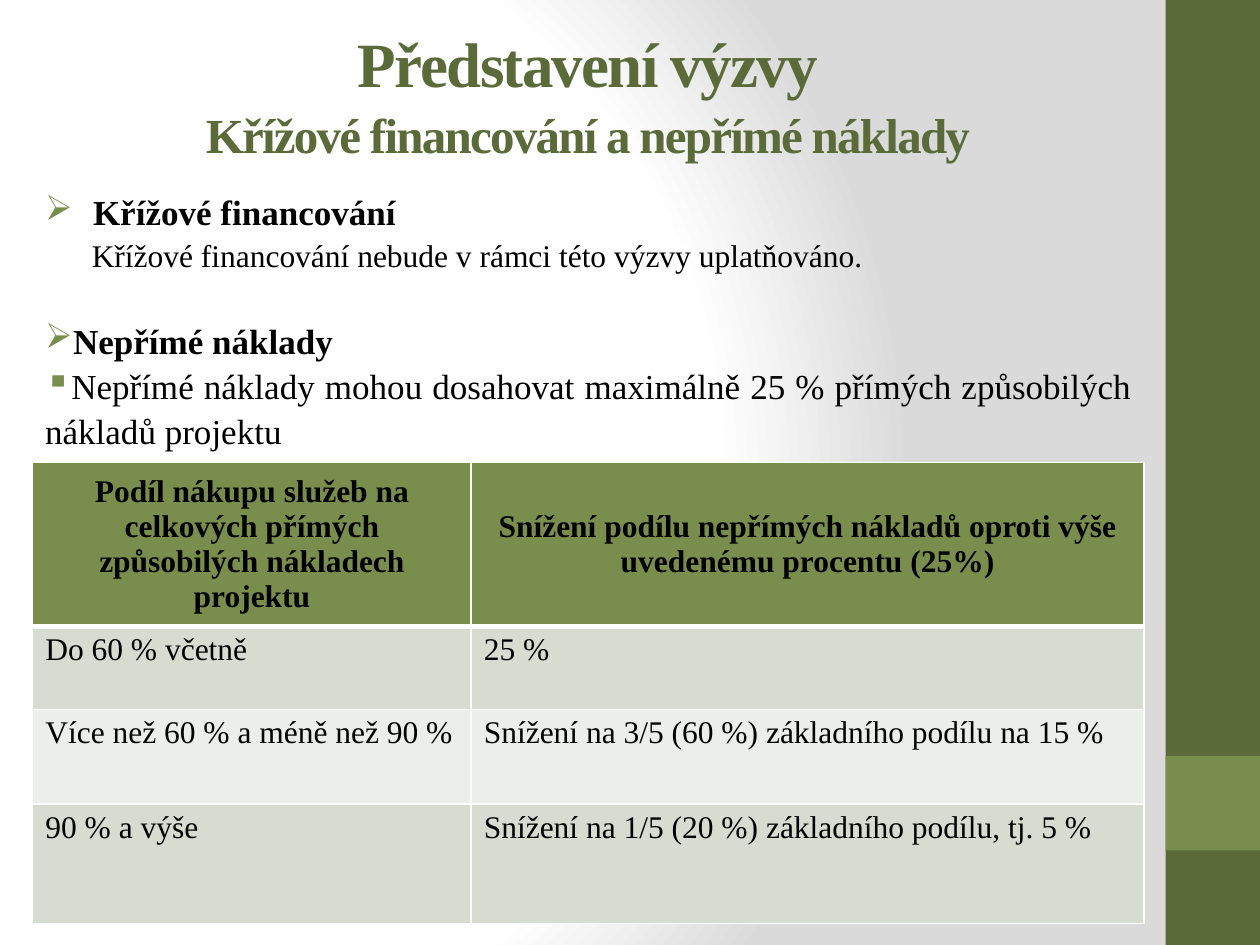
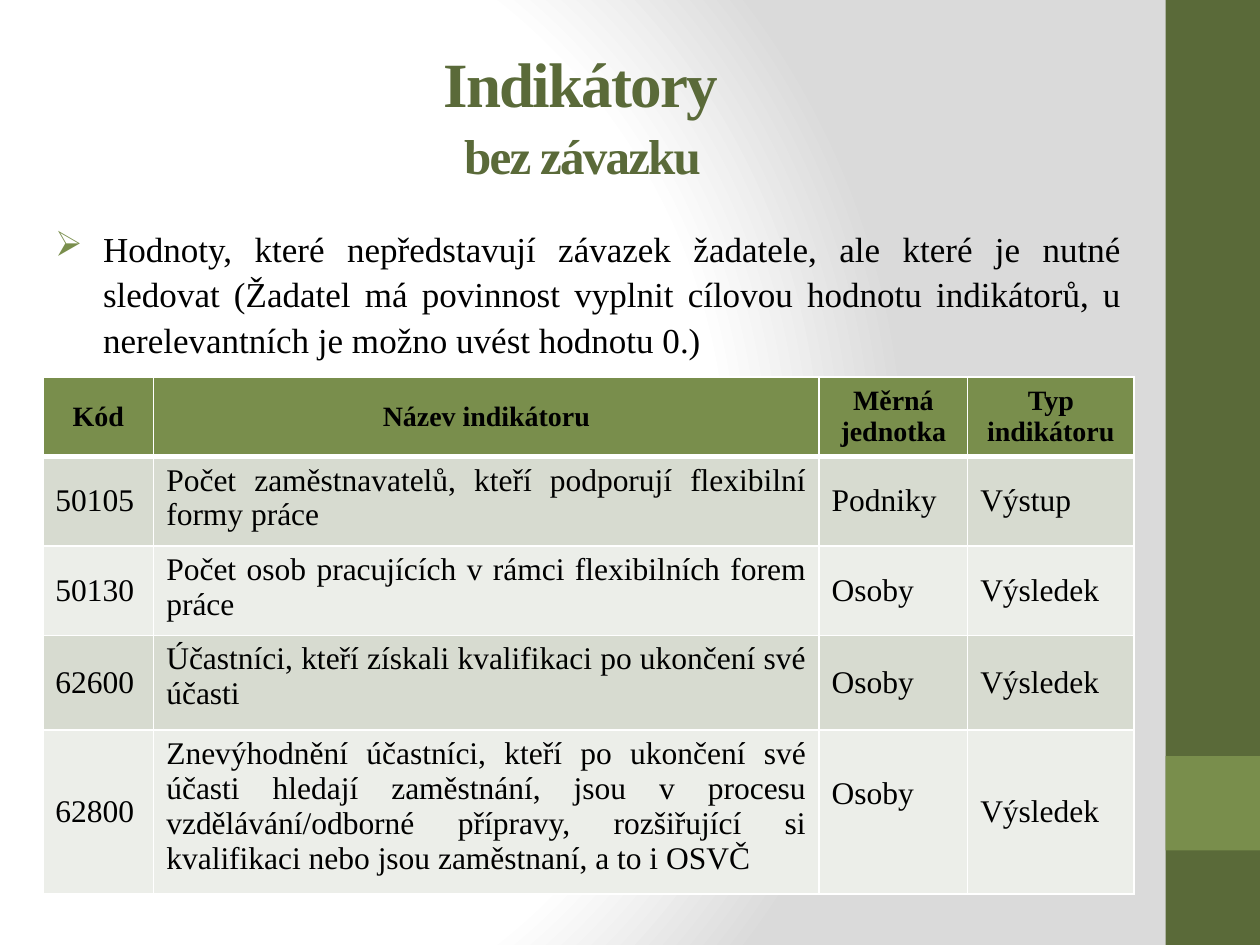
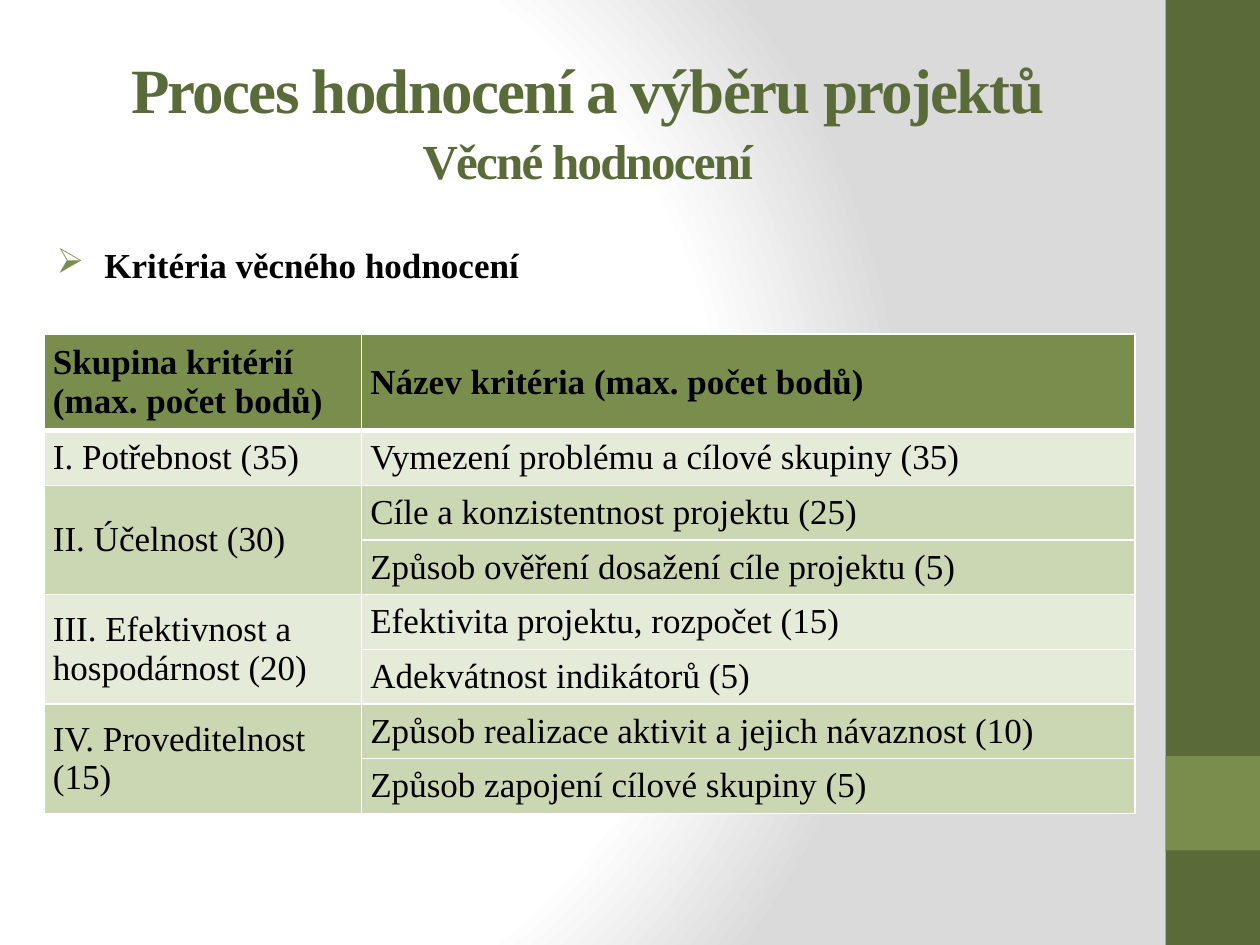
from dataclasses import dataclass

from lxml.etree import SubElement
from pptx import Presentation
from pptx.dml.color import RGBColor
from pptx.enum.shapes import MSO_SHAPE as Preset
from pptx.enum.text import MSO_ANCHOR as Anchor, MSO_AUTO_SIZE as AutoSize, PP_ALIGN as Align
from pptx.oxml import parse_xml
from pptx.oxml.ns import nsdecls, qn
from pptx.presentation import Presentation as Deck
from pptx.slide import Slide
from pptx.table import _Cell as Cell
from pptx.text.text import _Paragraph as Paragraph
from pptx.util import Inches, Pt

COLORS = {
    "dark": "5A6A39",
    "green": "798E4C",
    "text": "000000",
    "white": "FFFFFF",
    "edge": "DADADA",
    "gray_dark": "D7DBD0",
    "gray_light": "ECEEE9",
    "green_dark": "CBD6B3",
    "green_light": "E5EBD9",
}
FONT = "Times New Roman"
LINE_SPACING = 1.08


@dataclass
class Band:
    top: float
    height: float
    color: str


@dataclass
class Title:
    main: str
    sub: str
    top: float
    height: float


@dataclass
class Item:
    text: str
    size: int = 20
    bold: bool = False
    bullet: str = ""
    left: float = 0.38
    hanging: float = 0.38
    before: int = 0
    align: Align = Align.JUSTIFY


@dataclass
class Body:
    left: float
    top: float
    width: float
    height: float
    items: list[Item]


@dataclass
class Grid:
    left: float
    top: float
    columns: list[float]
    heights: list[float]
    rows: list[list[str]]
    fills: list[str]
    anchors: list[Anchor]
    head_size: int = 18
    size: int = 18
    head_align: Align = Align.CENTER
    align: Align = Align.LEFT
    inset: float = 0.1


BANDS = [Band(0, 7.5, "dark"), Band(6, 0.75, "green")]


def rgb(name: str) -> RGBColor:
    return RGBColor.from_string(COLORS[name])


def set_font(para: Paragraph, size: int, color: str, bold: bool) -> None:
    para.font.name = FONT
    para.font.size = Pt(size)
    para.font.bold = bold
    para.font.color.rgb = rgb(color)


def set_background(deck: Deck) -> None:
    stops = "".join(
        f'<a:gs pos="{place * 1000}"><a:srgbClr val="{COLORS[name]}"/></a:gs>'
        for place, name in [(0, "white"), (75, "white"), (100, "edge")]
    )
    background = parse_xml(
        f'<p:bg {nsdecls("p", "a")}><p:bgPr><a:gradFill rotWithShape="1">'
        f'<a:gsLst>{stops}</a:gsLst><a:path path="circle">'
        '<a:fillToRect l="20000" t="50000" r="100000" b="50000"/></a:path>'
        "</a:gradFill><a:effectLst/></p:bgPr></p:bg>"
    )
    common = deck.slide_master.element.find(qn("p:cSld"))
    former = common.find(qn("p:bg"))
    if former is not None:
        common.remove(former)
    common.insert(0, background)


def add_bands(page: Slide) -> None:
    for band in BANDS:
        shape = page.shapes.add_shape(
            Preset.RECTANGLE, Inches(9.25), Inches(band.top), Inches(0.75), Inches(band.height)
        )
        shape.shadow.inherit = False
        shape.fill.solid()
        shape.fill.fore_color.rgb = rgb(band.color)
        shape.line.fill.background()


def set_title(page: Slide, title: Title) -> None:
    box = page.shapes.title
    box.left, box.top = Inches(0.5), Inches(title.top)
    box.width, box.height = Inches(8.33), Inches(title.height)
    frame = box.text_frame
    frame.auto_size = AutoSize.NONE
    frame.vertical_anchor = Anchor.MIDDLE
    para = frame.paragraphs[0]
    para.alignment = Align.CENTER
    para.line_spacing = LINE_SPACING
    set_font(para, 36, "dark", True)
    para.add_run().text = title.main
    para.add_line_break()
    para.add_run().text = title.sub
    for span, size in zip(para.runs, (36, 28)):
        span.font.size = Pt(size)
        span.font._element.set("spc", "-100") if hasattr(span.font, "_element") else span._r.get_or_add_rPr().set("spc", "-100")


def add_bullet(para: Paragraph, item: Item) -> None:
    props = para._p.get_or_add_pPr()
    props.set("marL", str(Inches(item.left)))
    props.set("indent", str(-Inches(item.hanging)))
    if item.bullet:
        color = SubElement(props, qn("a:buClr"))
        SubElement(color, qn("a:srgbClr")).set("val", COLORS["green"])
        SubElement(props, qn("a:buChar")).set("char", item.bullet)


def add_body(page: Slide, body: Body) -> None:
    box = page.shapes.add_textbox(
        Inches(body.left), Inches(body.top), Inches(body.width), Inches(body.height)
    )
    frame = box.text_frame
    frame.word_wrap = True
    for index, item in enumerate(body.items):
        para = frame.add_paragraph() if index else frame.paragraphs[0]
        para.text = item.text
        para.alignment = item.align
        para.line_spacing = LINE_SPACING
        if item.before:
            para.space_before = Pt(item.before)
        add_bullet(para, item)
        set_font(para, item.size, "text", item.bold)


def set_borders(cell: Cell, is_head: bool) -> None:
    props = cell._tc.get_or_add_tcPr()
    for side in "LRTB":
        width = 3 if is_head and side == "B" else 1
        line = SubElement(props, qn(f"a:ln{side}"))
        line.set("w", str(Pt(width)))
        fill = SubElement(line, qn("a:solidFill"))
        SubElement(fill, qn("a:srgbClr")).set("val", COLORS["white"])


def add_grid(page: Slide, grid: Grid):
    table = page.shapes.add_table(
        len(grid.rows), len(grid.columns), Inches(grid.left), Inches(grid.top),
        Inches(sum(grid.columns)), Inches(sum(grid.heights)),
    ).table
    for column, width in zip(table.columns, grid.columns):
        column.width = Inches(width)
    for row, height in zip(table.rows, grid.heights):
        row.height = Inches(height)
    for r, texts in enumerate(grid.rows):
        is_head = r == 0
        for c, text in enumerate(texts):
            cell = table.cell(r, c)
            set_borders(cell, is_head)
            cell.fill.solid()
            cell.fill.fore_color.rgb = rgb("green" if is_head else grid.fills[r - 1])
            cell.margin_left = cell.margin_right = Inches(grid.inset)
            cell.vertical_anchor = Anchor.MIDDLE if is_head else grid.anchors[c]
            cell.text = text
            para = cell.text_frame.paragraphs[0]
            para.alignment = grid.head_align if is_head else grid.align
            set_font(para, grid.head_size if is_head else grid.size, "text", is_head)
        if not texts[0]:
            table.cell(r - 1, 0).merge(table.cell(r, 0))
    return table


def add_page(deck: Deck, title: Title, body: Body, grid: Grid):
    page = deck.slides.add_slide(deck.slide_layouts[5])
    add_bands(page)
    set_title(page, title)
    add_body(page, body)
    return add_grid(page, grid)


def add_costs(deck: Deck) -> None:
    add_page(
        deck,
        Title("Představení výzvy", "Křížové financování a nepřímé náklady", 0.13, 1.18),
        Body(0.26, 1.44, 8.82, 2.07, [
            Item("Křížové financování", bold=True, bullet="➢"),
            Item("Křížové financování nebude v rámci této výzvy uplatňováno.",
                 size=18, left=0.37, hanging=0, align=Align.LEFT),
            Item("Nepřímé náklady", bold=True, bullet="➢", left=0, hanging=0.39, before=24),
            Item("Nepřímé náklady mohou dosahovat maximálně 25 % přímých způsobilých "
                 "nákladů projektu", bullet="▪", left=0, hanging=0.39),
        ]),
        Grid(
            0.26, 3.67, [3.48, 5.34], [1.08, 0.66, 0.75, 0.95],
            [
                ["Podíl nákupu služeb na celkových přímých způsobilých nákladech projektu",
                 "Snížení podílu nepřímých nákladů oproti výše uvedenému procentu (25%)"],
                ["Do 60 % včetně", "25 %"],
                ["Více než 60 % a méně než 90 %",
                 "Snížení na 3/5 (60 %) základního podílu na 15 %"],
                ["90 % a výše", "Snížení na 1/5 (20 %) základního podílu, tj. 5 %"],
            ],
            ["gray_dark", "gray_light", "gray_dark"],
            [Anchor.TOP] * 2,
        ),
    )


def add_indicators(deck: Deck) -> None:
    table = add_page(
        deck,
        Title("Indikátory ", "bez závazku ", 0.46, 0.85),
        Body(0.34, 1.73, 8.66, 1.23, [
            Item("Hodnoty, které nepředstavují závazek žadatele, ale které je nutné sledovat "
                 "(Žadatel má povinnost vyplnit cílovou hodnotu indikátorů, u nerelevantních "
                 "je možno uvést hodnotu 0.)", bullet="➢"),
        ]),
        Grid(
            0.34, 2.99, [0.88, 5.28, 1.18, 1.32], [0.55, 0.71, 0.71, 0.75, 1.1],
            [
                ["Kód", "Název indikátoru", "Měrná jednotka", "Typ indikátoru"],
                ["50105", "Počet zaměstnavatelů, kteří podporují flexibilní formy práce",
                 "Podniky", "Výstup"],
                ["50130", "Počet osob pracujících v rámci flexibilních forem práce",
                 "Osoby", "Výsledek"],
                ["62600", "Účastníci, kteří získali kvalifikaci po ukončení své účasti",
                 "Osoby", "Výsledek"],
                ["62800", "Znevýhodnění účastníci, kteří po ukončení své účasti hledají "
                 "zaměstnání, jsou v procesu vzdělávání/odborné přípravy, rozšiřující si "
                 "kvalifikaci nebo jsou zaměstnaní, a to i OSVČ", "Osoby", "Výsledek"],
            ],
            ["gray_dark", "gray_light"] * 2,
            [Anchor.MIDDLE, Anchor.TOP, Anchor.MIDDLE, Anchor.MIDDLE],
            head_size=16,
            align=Align.JUSTIFY,
        ),
    )
    table.cell(4, 2).margin_bottom = Inches(0.34)


def add_criteria(deck: Deck) -> None:
    add_page(
        deck,
        Title("Proces hodnocení a výběru projektů", "Věcné hodnocení", 0.3, 1.25),
        Body(0.35, 1.86, 8.58, 0.63, [
            Item("Kritéria věcného hodnocení", bold=True, bullet="➢", align=Align.LEFT),
        ]),
        Grid(
            0.35, 2.65, [2.52, 6.14], [0.41] * 8,
            [
                ["Skupina kritérií (max. počet bodů)", "Název kritéria (max. počet bodů)"],
                ["I. Potřebnost (35)", "Vymezení problému a cílové skupiny (35)"],
                ["II. Účelnost (30)", "Cíle a konzistentnost projektu (25)"],
                ["", "Způsob ověření dosažení cíle projektu (5)"],
                ["III. Efektivnost a hospodárnost (20)", "Efektivita projektu, rozpočet (15)"],
                ["", "Adekvátnost indikátorů (5)"],
                ["IV. Proveditelnost (15)", "Způsob realizace aktivit a jejich návaznost (10)"],
                ["", "Způsob zapojení cílové skupiny (5)"],
            ],
            ["green_light"] + ["green_dark"] * 2 + ["green_light"] * 2 + ["green_dark"] * 2,
            [Anchor.MIDDLE] * 2,
            head_size=20,
            size=20,
            head_align=Align.LEFT,
            inset=0.07,
        ),
    )


def main() -> None:
    deck = Presentation()
    deck.slide_width, deck.slide_height = Inches(10), Inches(7.5)
    set_background(deck)
    add_costs(deck)
    add_indicators(deck)
    add_criteria(deck)
    deck.save("out.pptx")


if __name__ == "__main__":
    main()
